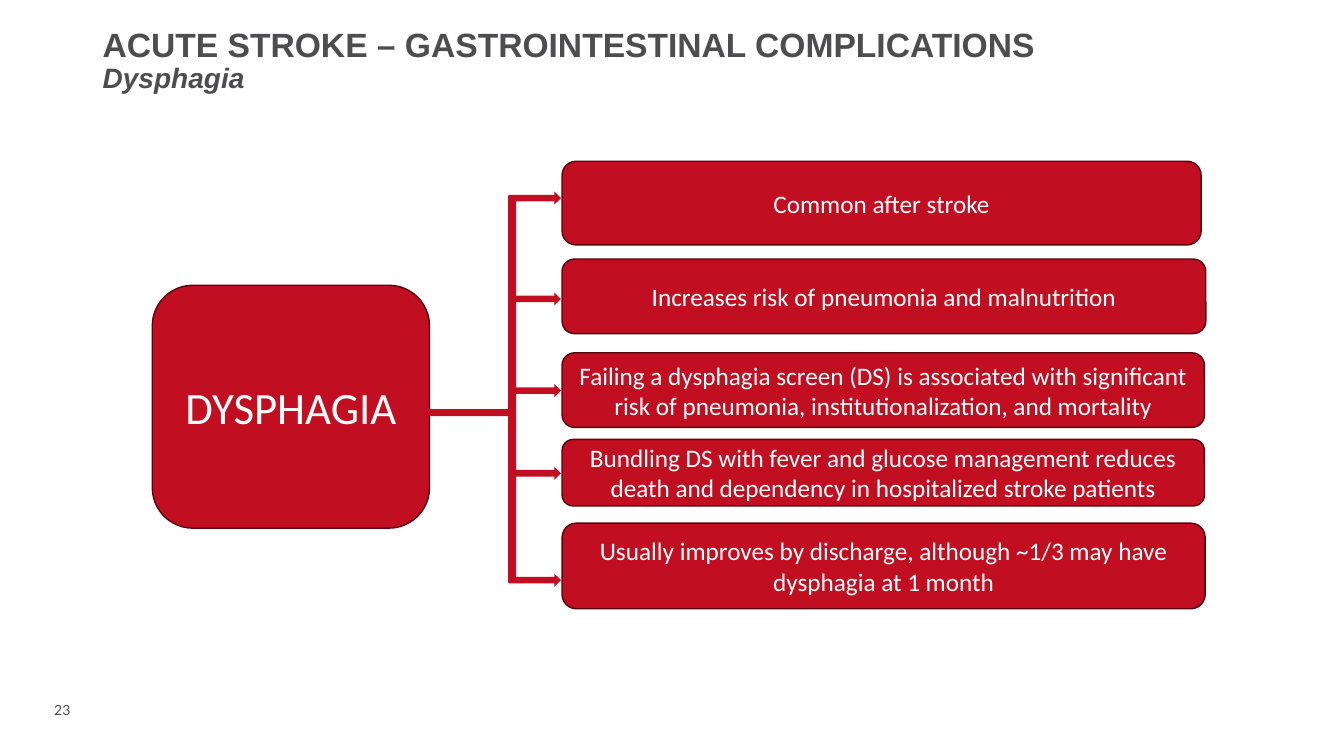
from pptx import Presentation
from pptx.dml.color import RGBColor
from pptx.enum.shapes import MSO_SHAPE
from pptx.enum.text import MSO_ANCHOR, PP_ALIGN
from pptx.util import Inches, Pt

ROUNDED = MSO_SHAPE.FLOWCHART_ALTERNATE_PROCESS
BAR, ARROW = MSO_SHAPE.RECTANGLE, MSO_SHAPE.RIGHT_ARROW
MIDDLE, BOTTOM, TOP = MSO_ANCHOR.MIDDLE, MSO_ANCHOR.BOTTOM, MSO_ANCHOR.TOP
CENTER = PP_ALIGN.CENTER

RED = RGBColor(0xC1, 0x0E, 0x20)
DARK_RED = RGBColor(0x55, 0x06, 0x0E)
GREY = RGBColor(0x4D, 0x4D, 0x4F)
WHITE = RGBColor(0xFF, 0xFF, 0xFF)

SLIDE_W, SLIDE_H = Inches(13.33), Inches(7.5)

# All positions are percentages of the slide's width and height
FACT_LEFT, ARROW_LEFT, ARROW_W, ARROW_H = 41.82, 37.84, 3.9, 1.75

# Text, top, width, height, top of its arrow
FACTS = [
    ("Common after stroke", 21.33, 47.55, 11.07, 25.33),
    ("Increases risk of pneumonia and malnutrition", 34.27, 47.9, 9.87, 38.67),
    ("Failing a dysphagia screen (DS) is associated with significant risk of "
     "pneumonia, institutionalization, and mortality", 46.67, 47.8, 9.87, 50.8),
    ("Bundling DS with fever and glucose management reduces death and "
     "dependency in hospitalized stroke patients", 58.13, 47.8, 8.8, 61.73),
    ("Usually improves by discharge, although ~1/3 may have dysphagia at "
     "1 month", 69.2, 47.85, 11.33, 75.87),
]


def place(left, top, width, height):
    return (round(SLIDE_W * left / 100), round(SLIDE_H * top / 100),
            round(SLIDE_W * width / 100), round(SLIDE_H * height / 100))


def add_run(p, text, size, font="Calibri", color=WHITE, bold=False, italic=False):
    r = p.add_run()
    r.text = text
    r.font.name, r.font.size = font, Pt(size)
    r.font.bold, r.font.italic = bold, italic
    r.font.color.rgb = color


def add_block(s, kind, box, outline=None):
    sp = s.shapes.add_shape(kind, *place(*box))
    sp.shadow.inherit = False
    sp.fill.solid()
    sp.fill.fore_color.rgb = RED
    if outline is None:
        sp.line.fill.background()
    else:
        sp.line.color.rgb = outline
        sp.line.width = Pt(1)
    return sp


def add_label_box(s, text, box, size):
    tf = add_block(s, ROUNDED, box, DARK_RED).text_frame
    tf.word_wrap = True
    tf.vertical_anchor = MIDDLE
    p = tf.paragraphs[0]
    p.alignment = CENTER
    add_run(p, text, size)


def add_text_box(s, box, anchor, wrap=True):
    tf = s.shapes.add_textbox(*place(*box)).text_frame
    tf.word_wrap = wrap
    tf.vertical_anchor = anchor
    return tf.paragraphs[0]


def main():
    prs = Presentation()
    prs.slide_width, prs.slide_height = SLIDE_W, SLIDE_H
    s = prs.slides.add_slide(prs.slide_layouts[6])

    # Title and slide number
    p = add_text_box(s, (6.9, 5.07, 86.25, 8.13), BOTTOM)
    p.line_spacing = 0.9
    add_run(p, "ACUTE STROKE – GASTROINTESTINAL COMPLICATIONS", 24, "Arial", GREY,
            bold=True)
    p.add_line_break()
    add_run(p, "Dysphagia", 20, "Arial", GREY, bold=True, italic=True)
    p = add_text_box(s, (3.3, 92.13, 2.93, 3.6), TOP, wrap=False)
    add_run(p, "23", 10, "Lato", GREY)

    # Topic and its facts
    add_label_box(s, "DYSPHAGIA", (11.33, 37.73, 20.63, 32.13), 32)
    for text, top, width, height, _ in FACTS:
        add_label_box(s, text, (FACT_LEFT, top, width, height), 18)

    # Branching: stem, trunk and one arrow for each fact
    add_block(s, BAR, (31.88, 54.13, 6.22, 0.93))
    add_block(s, BAR, (37.8, 25.87, 0.6, 51.2))
    for *_, arrow_top in FACTS:
        add_block(s, ARROW, (ARROW_LEFT, arrow_top, ARROW_W, ARROW_H))

    prs.save("out.pptx")


if __name__ == "__main__":
    main()
